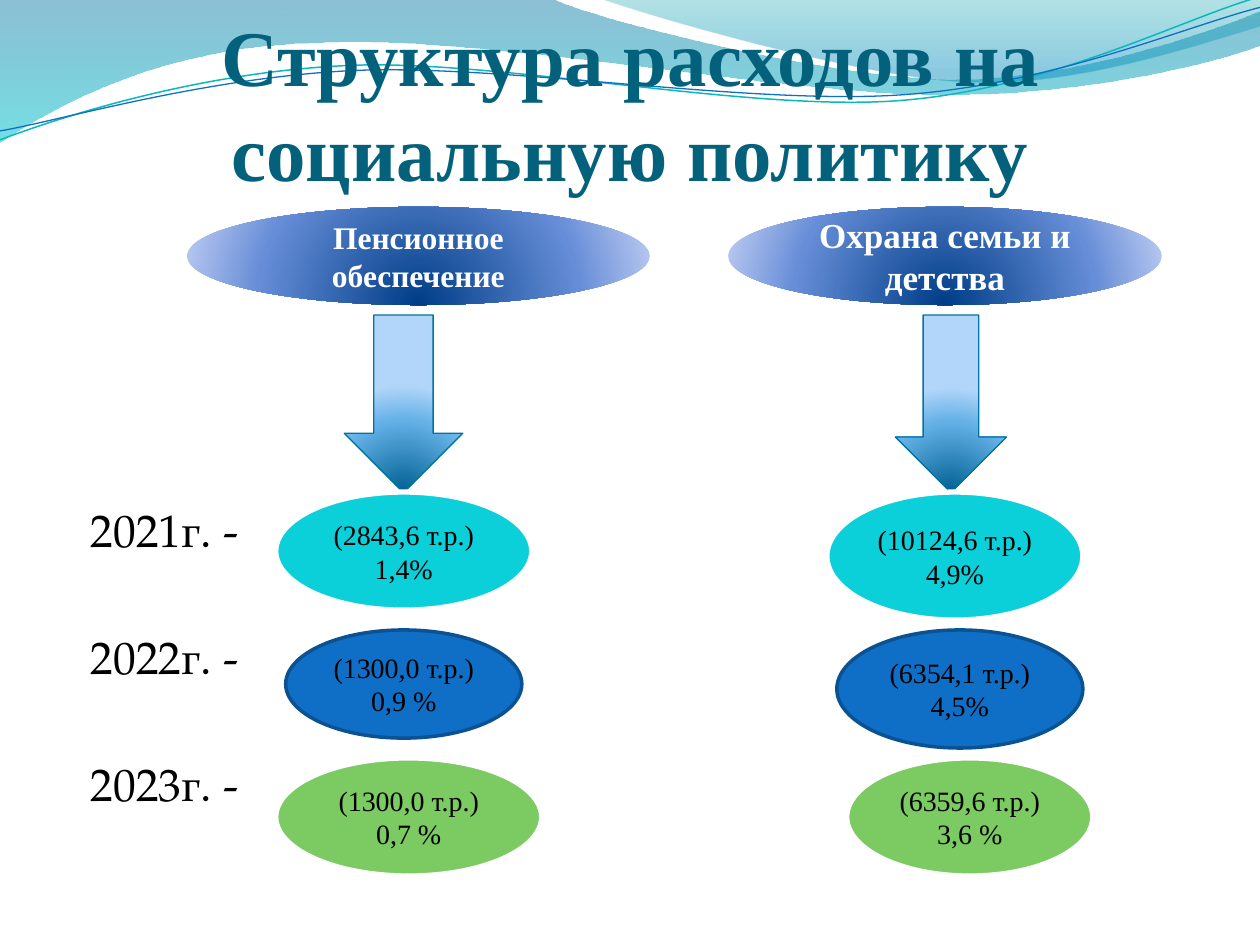
from dataclasses import dataclass
from typing import NamedTuple

from pptx import Presentation, oxml
from pptx import util as u
from pptx.dml import color
from pptx.enum import shapes, text
from pptx.oxml import ns

COLORS = {
    "title": "04617B", "black": "000000", "white": "FFFFFF",
    "cyan": "0BD0D9", "blue": "0F6FC6", "navy": "0B5292", "green": "7CCA62",
    "teal_line": "0AB8BF", "arrow_line": "0074A1",
}
SERIF = "Times New Roman"
YEAR_FONT = "TeX Gyre Pagella"
UNITS_PER_CM = 1000


class Box(NamedTuple):
    left: float
    top: float
    width: float
    height: float

    def lengths(self) -> list:
        return [u.Cm(value) for value in self]


class Stop(NamedTuple):
    position: int
    color: str
    opacity: int = 100


class Gradient(NamedTuple):
    stops: tuple
    radial: bool = False


@dataclass
class Wave:
    start: tuple
    segments: list
    fill: Gradient | None = None
    line: str | None = None
    line_width: float = 0


@dataclass
class Label:
    wording: str
    size: int
    color: str = "black"
    font: str = SERIF
    bold: bool = False


@dataclass
class Oval:
    box: Box
    label: Label
    fill: str | Gradient
    line: str | None = None
    line_width: float = 0


class YearRow(NamedTuple):
    year: str
    fill: str
    line: str
    line_width: float
    amounts: tuple


WAVES = [
    Wave((0, 0), [
        ((11.18, 0),),
        ((12.09, 0.43), (16.87, 1.6), (19.25, 1.6)),
        ((21.67, 1.6), (24.33, 0.66), (25.4, 0.23)),
        ((25.4, 0.91),),
        ((24.97, 1.12), (22.1, 1.93), (18.95, 1.91)),
        ((15.8, 1.91), (9.7, 0.71), (6.53, 0.86)),
        ((3.28, 0.91), (1.17, 2.11), (0, 2.87)),
    ], Gradient((Stop(0, "0074A1", 45), Stop(100, "00C6CF", 55)))),
    Wave((12.17, 0), [
        ((12.93, 0.28), (17.32, 1.57), (19.53, 1.65)),
        ((21.74, 1.75), (24.41, 0.81), (25.4, 0.53)),
        ((25.4, 0),),
    ], Gradient((Stop(0, "00A1A9", 30), Stop(80, "008BBF", 45)))),
    Wave((0, 2.82), [
        ((1.22, 2.36), (4.01, 1.45), (7.04, 1.32)),
        ((10.03, 1.19), (15.06, 2.26), (18.11, 2.03)),
        ((21.16, 1.8), (23.83, 0.38), (25.35, -0.05)),
    ], line="teal_line", line_width=0.85),
    Wave((0, 2.64), [
        ((1.19, 2.44), (4.17, 1.55), (7.19, 1.42)),
        ((10.24, 1.3), (15.16, 2.13), (18.21, 1.91)),
        ((21.23, 1.7), (23.9, 0.53), (25.4, 0.15)),
    ], line="blue", line_width=0.75),
]
ARROW_FILL = Gradient((Stop(0, "006091"), Stop(68, "64B1E7"), Stop(100, "B1D6F9")), True)
HEADER_FILL = Gradient((Stop(0, "003D87"), Stop(68, "668DD7"), Stop(100, "B3C4EF")), True)
ARROWS = [Box(6.94, 6.35, 2.39, 3.58), Box(18.05, 6.35, 2.24, 3.58)]
HEADERS = [
    Oval(Box(3.77, 4.17, 9.33, 1.98),
         Label("Пенсионное обеспечение", 18, "white", bold=True), HEADER_FILL),
    Oval(Box(14.68, 4.17, 8.74, 1.98),
         Label("Охрана семьи и детства", 20, "white", bold=True), HEADER_FILL),
]
YEAR_ROWS = [
    YearRow("2021г. -", "cyan", "white", 3, (
        ("(2843,6 т.р.) 1,4%", Box(5.56, 9.92, 5.16, 2.38)),
        ("(10124,6 т.р.) 4,9%", Box(16.67, 9.92, 5.16, 2.58)))),
    YearRow("2022г. -", "blue", "navy", 2, (
        ("(1300,0 т.р.) 0,9 %", Box(5.76, 12.7, 4.76, 2.18)),
        ("(6354,1 т.р.) 4,5%", Box(16.87, 12.7, 4.96, 2.38)))),
    YearRow("2023г. -", "green", "white", 3, (
        ("(1300,0 т.р.) 0,7 %", Box(5.56, 15.28, 5.36, 2.38)),
        ("(6359,6 т.р.) 3,6 %", Box(17.07, 15.28, 4.96, 2.38)))),
]
YEARS_BOX = Box(1.58, 9.98, 3.9, 6.52)
YEAR_GAP = 41.4


def rgb(name: str) -> color.RGBColor:
    return color.RGBColor.from_string(COLORS[name])


def apply_gradient(shape, gradient: Gradient) -> None:
    stops = "".join(
        f'<a:gs pos="{stop.position * 1000}"><a:srgbClr val="{stop.color}">'
        f'<a:alpha val="{stop.opacity * 1000}"/></a:srgbClr></a:gs>'
        for stop in gradient.stops)
    direction = ('<a:path path="circle"><a:fillToRect l="50000" t="130000" '
                 'r="50000" b="-30000"/></a:path>' if gradient.radial
                 else '<a:lin ang="5400000" scaled="0"/>')
    shape.fill.solid()
    properties = shape.element.spPr
    properties.replace(
        properties.find(ns.qn("a:solidFill")),
        oxml.parse_xml(f'<a:gradFill {ns.nsdecls("a")} rotWithShape="1">'
                       f'<a:gsLst>{stops}</a:gsLst>{direction}</a:gradFill>'))


def style_shape(shape, fill: str | Gradient | None, line: str | None, width: float) -> None:
    shape.shadow.inherit = False
    if isinstance(fill, Gradient):
        apply_gradient(shape, fill)
    elif fill:
        shape.fill.solid()
        shape.fill.fore_color.rgb = rgb(fill)
    else:
        shape.fill.background()
    if line:
        shape.line.color.rgb = rgb(line)
        shape.line.width = u.Pt(width)
    else:
        shape.line.fill.background()


def write_label(shape, label: Label, align=text.PP_ALIGN.CENTER,
                anchor=text.MSO_ANCHOR.MIDDLE) -> None:
    frame = shape.text_frame
    frame.text = label.wording
    frame.word_wrap = True
    frame.auto_size = text.MSO_AUTO_SIZE.NONE
    frame.vertical_anchor = anchor
    for paragraph in frame.paragraphs:
        paragraph.alignment = align
        font = paragraph.runs[0].font
        font.name, font.size, font.bold = label.font, u.Pt(label.size), label.bold
        font.color.rgb = rgb(label.color)


def bend_segments(shape, segments: list) -> None:
    lines = iter(list(shape.element.iter(ns.qn("a:lnTo"))))
    for controls in segments:
        group = [next(lines) for _ in controls]
        if len(group) == 3:
            curve = oxml.parse_xml(f'<a:cubicBezTo {ns.nsdecls("a")}/>')
            group[0].addprevious(curve)
            for line in group:
                curve.append(line[0])
                line.getparent().remove(line)


def draw_wave(slide, wave: Wave) -> None:
    start, *points = [
        tuple(round(value * UNITS_PER_CM) for value in point)
        for controls in ((wave.start,), *wave.segments) for point in controls]
    builder = slide.shapes.build_freeform(*start, scale=u.Cm(1) / UNITS_PER_CM)
    builder.add_line_segments(points, close=False)
    shape = builder.convert_to_shape()
    bend_segments(shape, wave.segments)
    style_shape(shape, wave.fill, wave.line, wave.line_width)


def draw_title(slide) -> None:
    title = slide.shapes.title
    title.left, title.top, title.width, title.height = Box(1.27, 0.74, 22.86, 3.23).lengths()
    write_label(title, Label("Структура расходов на социальную политику", 45, "title", bold=True),
                anchor=text.MSO_ANCHOR.BOTTOM)
    frame = title.text_frame
    frame.margin_left = frame.margin_right = frame.margin_bottom = 0
    frame.paragraphs[0].line_spacing = 1.0
    title.element.getparent().append(title.element)


def draw_arrow(slide, box: Box) -> None:
    arrow = slide.shapes.add_shape(shapes.MSO_SHAPE.DOWN_ARROW, *box.lengths())
    style_shape(arrow, ARROW_FILL, "arrow_line", 0.75)


def draw_oval(slide, oval: Oval) -> None:
    shape = slide.shapes.add_shape(shapes.MSO_SHAPE.OVAL, *oval.box.lengths())
    style_shape(shape, oval.fill, oval.line, oval.line_width)
    write_label(shape, oval.label)


def draw_years(slide) -> None:
    years = slide.shapes.add_textbox(*YEARS_BOX.lengths())
    wording = "\n".join(row.year for row in YEAR_ROWS)
    write_label(years, Label(wording, 26, font=YEAR_FONT), text.PP_ALIGN.LEFT)
    for paragraph in years.text_frame.paragraphs[1:]:
        paragraph.space_before = u.Pt(YEAR_GAP)


def main() -> None:
    presentation = Presentation()
    presentation.slide_width, presentation.slide_height = u.Cm(25.4), u.Cm(19.05)
    slide = presentation.slides.add_slide(presentation.slide_layouts[5])
    for wave in WAVES:
        draw_wave(slide, wave)
    draw_title(slide)
    draw_years(slide)
    for arrow in ARROWS:
        draw_arrow(slide, arrow)
    for row in YEAR_ROWS:
        for amount, box in row.amounts:
            draw_oval(slide, Oval(box, Label(amount, 16), row.fill, row.line, row.line_width))
    for header in HEADERS:
        draw_oval(slide, header)
    presentation.save("out.pptx")


if __name__ == "__main__":
    main()
